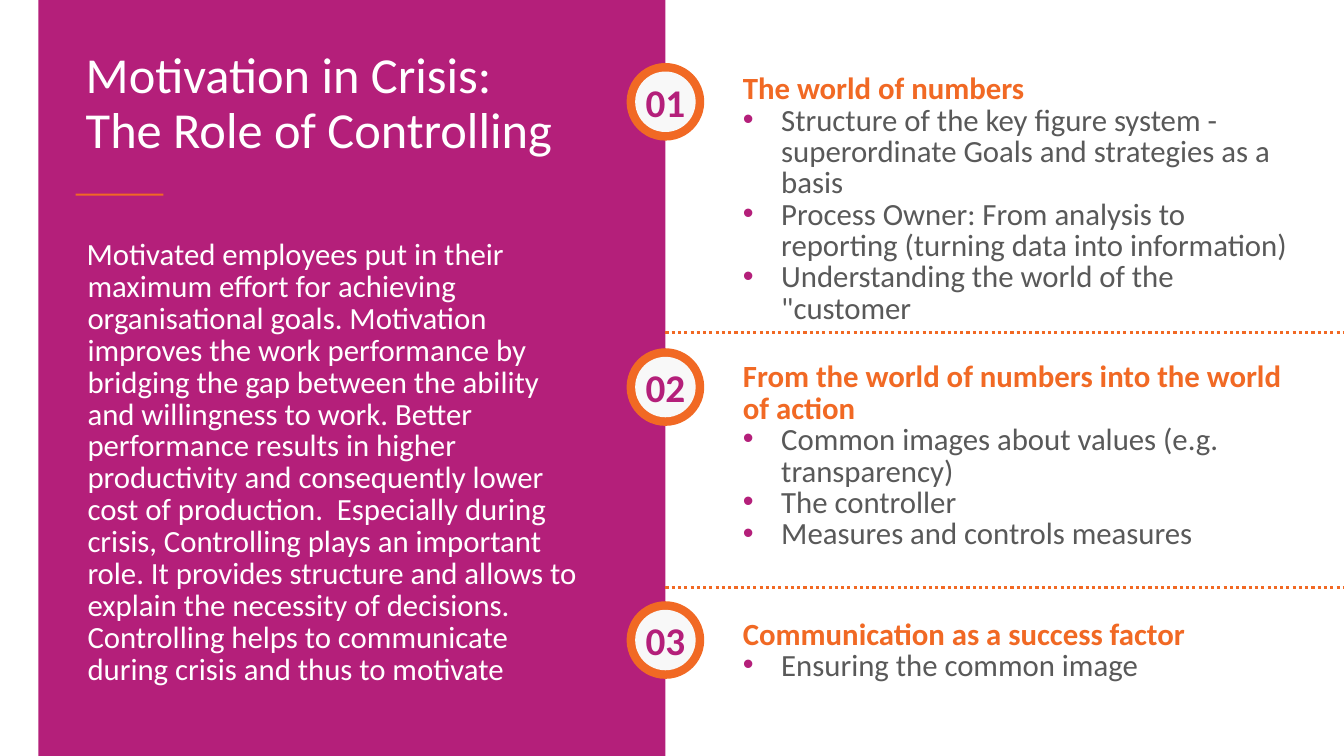
from lxml import etree
from pptx import Presentation
from pptx.dml.color import RGBColor
from pptx.enum.dml import MSO_LINE
from pptx.enum.shapes import MSO_CONNECTOR, MSO_SHAPE
from pptx.enum.text import MSO_ANCHOR, MSO_AUTO_SIZE, PP_ALIGN
from pptx.oxml.ns import qn
from pptx.util import Inches, Pt

# Content
TITLE = "Motivation in Crisis: The Role of Controlling"
INTRO = (
    "Motivated employees put in their maximum effort for achieving organisational goals. "
    "Motivation improves the work performance by bridging the gap between the ability and "
    "willingness to work. Better performance results in higher productivity and consequently "
    "lower cost of production.  Especially during crisis, Controlling plays an important role. "
    "It provides structure and allows to explain the necessity of decisions. Controlling helps "
    "to communicate during crisis and thus to motivate"
)
# Badge centre, text top, text height, heading, bullets
SECTIONS = [
    (1.01, 0.69, 2.6, "The world of numbers", [
        "Structure of the key figure system - superordinate Goals and strategies as a basis",
        "Process Owner: From analysis to reporting (turning data into information)",
        'Understanding the world of the "customer',
    ]),
    (3.84, 3.55, 2.0, "From the world of numbers into the world of action", [
        "Common images about values (e.g. transparency)",
        "The controller",
        "Measures and controls measures",
    ]),
    (6.35, 6.1, 0.75, "Communication as a success factor", [
        "Ensuring the common image",
    ]),
]
DIVIDERS = [3.3, 5.83]

# Style
MAGENTA = RGBColor(0xB4, 0x1F, 0x7A)
ORANGE = RGBColor(0xF1, 0x69, 0x24)
GREY = RGBColor(0x59, 0x59, 0x59)
PALE = RGBColor(0xF8, 0xF8, 0xF8)
WHITE = RGBColor(0xFF, 0xFF, 0xFF)
FONT = "Calibri"
PAGE_WIDTH, PAGE_HEIGHT = 13.33, 7.5
PANEL_LEFT, PANEL_RIGHT = 0.38, 6.6
BADGE_SIZE, BADGE_CORE = 0.77, 0.6
INDENT = 0.38

deck = Presentation()
deck.slide_width, deck.slide_height = Inches(PAGE_WIDTH), Inches(PAGE_HEIGHT)
page = deck.slides.add_slide(deck.slide_layouts[5])


def add_filled(kind, left, top, width, height, color):
    shape = page.shapes.add_shape(
        kind, Inches(left), Inches(top), Inches(width), Inches(height))
    shape.shadow.inherit = False
    shape.fill.solid()
    shape.fill.fore_color.rgb = color
    shape.line.fill.background()
    return shape


def add_text_frame(left, top, width, height):
    box = page.shapes.add_textbox(
        Inches(left), Inches(top), Inches(width), Inches(height))
    box.text_frame.word_wrap = True
    return box.text_frame


def style(para, size, color, bold=False):
    font = para.font
    font.name, font.size, font.bold = FONT, Pt(size), bold
    font.color.rgb = color


def indent(para, amount):
    properties = para._p.get_or_add_pPr()
    properties.set("marL", str(Inches(amount)))
    properties.set("indent", str(-Inches(amount)))
    return properties


def add_bullet(para):
    properties = indent(para, INDENT)
    bullet_color = etree.SubElement(properties, qn("a:buClr"))
    etree.SubElement(bullet_color, qn("a:srgbClr")).set("val", str(MAGENTA))
    etree.SubElement(properties, qn("a:buFont")).set("typeface", "Arial")
    etree.SubElement(properties, qn("a:buChar")).set("char", "•")


def add_badge(number, center):
    for size, color in ((BADGE_SIZE, ORANGE), (BADGE_CORE, PALE)):
        disc = add_filled(MSO_SHAPE.OVAL, PANEL_RIGHT - size / 2,
                          center - size / 2, size, size, color)
    frame = disc.text_frame
    frame.margin_left = frame.margin_right = frame.margin_top = frame.margin_bottom = 0
    frame.word_wrap = False
    frame.vertical_anchor = MSO_ANCHOR.MIDDLE
    para = frame.paragraphs[0]
    para.text = f"{number:02d}"
    para.alignment = PP_ALIGN.CENTER
    style(para, 28, MAGENTA, bold=True)


# Left panel, placed behind the title
panel = add_filled(MSO_SHAPE.RECTANGLE, PANEL_LEFT, 0,
                   PANEL_RIGHT - PANEL_LEFT, PAGE_HEIGHT, MAGENTA)
page.shapes._spTree.insert(2, panel._element)

# Title and its accent rule
title = page.shapes.title
title.left, title.top = Inches(0.75), Inches(0.45)
title.width, title.height = Inches(4.87), Inches(1.3)
title.text_frame.text = TITLE
title.text_frame.word_wrap = True
title.text_frame.auto_size = MSO_AUTO_SIZE.NONE
title.text_frame.vertical_anchor = MSO_ANCHOR.TOP
title_para = title.text_frame.paragraphs[0]
title_para.alignment = PP_ALIGN.LEFT
title_para.line_spacing = 0.9
style(title_para, 36, WHITE)
add_filled(MSO_SHAPE.RECTANGLE, 0.75, 1.92, 0.87, 0.02, ORANGE)

# Introduction
intro = add_text_frame(0.76, 2.33, 5.21, 4.6).paragraphs[0]
intro.text = INTRO
indent(intro, 0.01)
intro.line_spacing = Pt(22.8)
style(intro, 22, WHITE)

# Dotted dividers
for top in DIVIDERS:
    divider = page.shapes.add_connector(
        MSO_CONNECTOR.STRAIGHT, Inches(PANEL_RIGHT), Inches(top),
        Inches(PAGE_WIDTH), Inches(top))
    divider.line.color.rgb = ORANGE
    divider.line.width = Pt(2.25)
    divider.line.dash_style = MSO_LINE.ROUND_DOT
    etree.SubElement(divider._element.spPr, qn("a:effectLst"))

# Numbered sections
for number, (center, top, height, heading, bullets) in enumerate(SECTIONS, 1):
    add_badge(number, center)
    frame = add_text_frame(7.27, top, 5.68, height)
    para = frame.paragraphs[0]
    para.text = heading
    para.line_spacing = Pt(22.4)
    style(para, 22, ORANGE, bold=True)
    for bullet in bullets:
        para = frame.add_paragraph()
        para.text = bullet
        add_bullet(para)
        para.line_spacing = Pt(22.4)
        style(para, 22, GREY)

deck.save("out.pptx")
